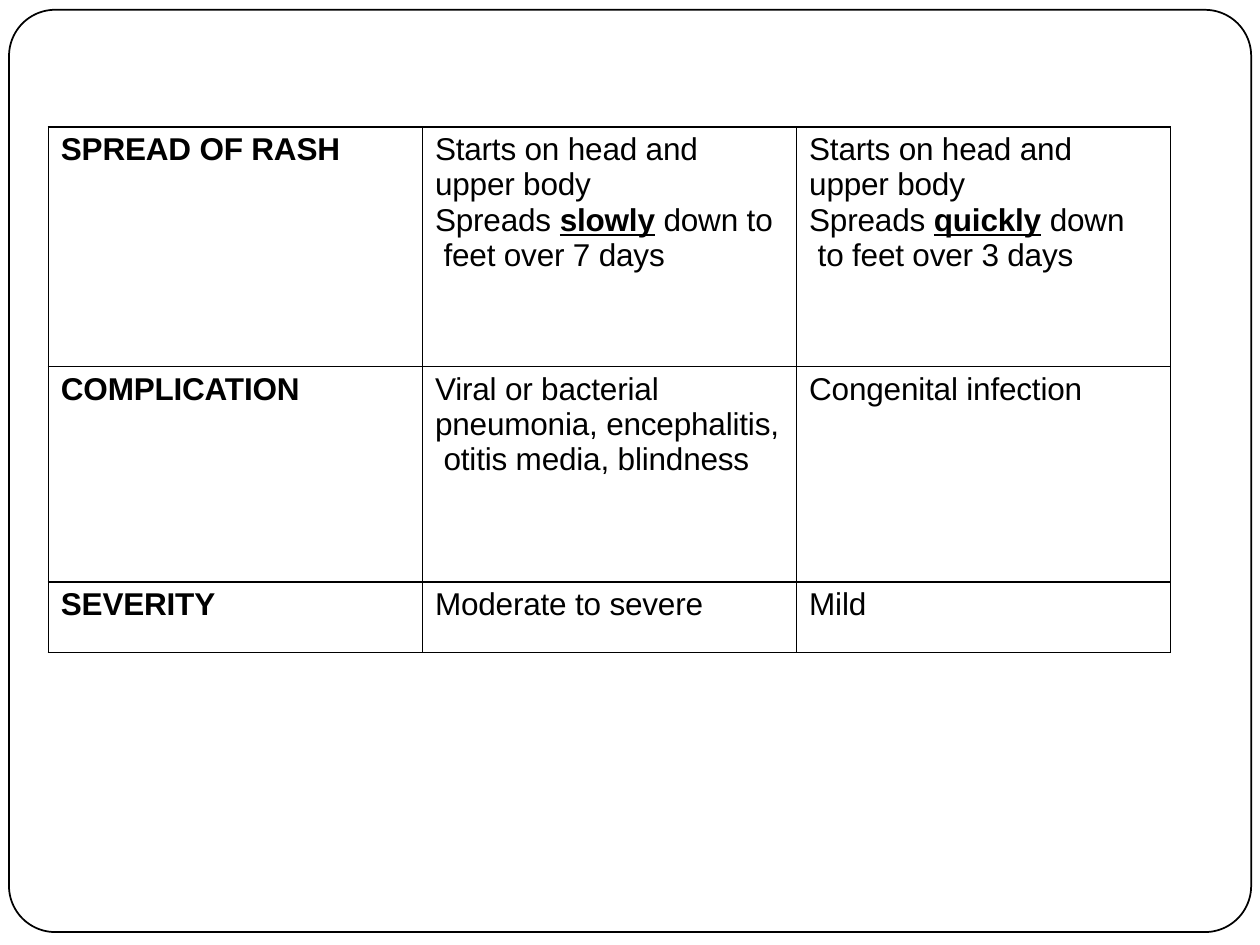
from lxml import etree
from pptx import Presentation
from pptx.dml.color import RGBColor
from pptx.enum.shapes import MSO_SHAPE
from pptx.oxml.ns import qn
from pptx.util import Pt

ROUNDED = MSO_SHAPE.ROUNDED_RECTANGLE
BLACK = RGBColor(0, 0, 0)
FONT = "Arial"
ROW_HEIGHTS = [136.8, 123.1, 40.4]
BORDERS = ("a:lnL", "a:lnR", "a:lnT", "a:lnB")


def rash_lines(adverb, before_break, after_break):
    """Describe the rash spread, with the adverb emphasised."""
    return [
        ["Starts on head and"],
        ["upper body"],
        ["Spreads ", (adverb,), before_break, "\n", after_break],
    ]


ROWS = [
    [
        [[("SPREAD OF RASH",)]],
        rash_lines("slowly", " down to", " feet over 7 days"),
        rash_lines("quickly", " down", " to feet over 3 days"),
    ],
    [
        [[("COMPLICATION",)]],
        [["Viral or bacterial", "\n", "pneumonia, encephalitis,", "\n",
          " otitis media, blindness"]],
        [["Congenital infection"]],
    ],
    [
        [[("SEVERITY",)]],
        [["Moderate to severe"]],
        [["Mild"]],
    ],
]


def add_text(para, text, size=18, bold=False, underline=False, spacing=-0.1):
    """Add one formatted span to a paragraph."""
    span = para.add_run()
    span.text = text
    font = span.font
    font.name, font.size = FONT, Pt(size)
    font.bold, font.underline = bold, underline
    font.color.rgb = BLACK
    span._r.get_or_add_rPr().set("spc", str(round(spacing * 100)))


def add_frame(page, left, top, width, height):
    """Draw the rounded page border."""
    box = page.shapes.add_shape(ROUNDED, Pt(left), Pt(top), Pt(width), Pt(height))
    box.adjustments[0] = 0.05
    box.shadow.inherit = False
    box.fill.background()
    box.line.color.rgb = BLACK
    box.line.width = Pt(1)


def style_cell(cell):
    """Clear the cell fill, set its margins and draw its borders."""
    cell.margin_left, cell.margin_top = Pt(7.2), Pt(2.9)
    cell.margin_right = cell.margin_bottom = 0
    properties = cell._tc.get_or_add_tcPr()
    for tag in BORDERS:
        line = etree.SubElement(properties, qn(tag), w=str(Pt(1)))
        fill = etree.SubElement(line, qn("a:solidFill"))
        etree.SubElement(fill, qn("a:srgbClr"), val=str(BLACK))
    cell.fill.background()


def fill_cell(cell, lines, heading):
    """Write paragraphs into a cell; tuples are emphasised spans."""
    frame = cell.text_frame
    for index, parts in enumerate(lines):
        para = frame.add_paragraph() if index else frame.paragraphs[0]
        para.space_before = Pt(0 if index else 3.1)
        for part in parts:
            if part == "\n":
                para.add_line_break()
            elif isinstance(part, tuple):
                add_text(para, part[0], bold=True, underline=not heading)
            else:
                add_text(para, part)


def add_comparison(page, left, top, width, height):
    """Build the three-column comparison table."""
    columns = len(ROWS[0])
    table = page.shapes.add_table(
        len(ROWS), columns, Pt(left), Pt(top), Pt(width), Pt(height)
    ).table
    table.first_row = table.horz_banding = False
    for column in table.columns:
        column.width = Pt(width / columns)
    for row_index, row in enumerate(ROWS):
        table.rows[row_index].height = Pt(ROW_HEIGHTS[row_index])
        for column_index, lines in enumerate(row):
            cell = table.cell(row_index, column_index)
            style_cell(cell)
            fill_cell(cell, lines, heading=column_index == 0)


def main():
    """Build and save the deck."""
    deck = Presentation()
    deck.slide_width, deck.slide_height = Pt(720), Pt(540)
    page = deck.slides.add_slide(deck.slide_layouts[6])
    add_frame(page, 5.2, 5.6, 709.8, 527)
    add_comparison(page, 27.6, 72.6, 641.4, sum(ROW_HEIGHTS))
    deck.save("out.pptx")


if __name__ == "__main__":
    main()
